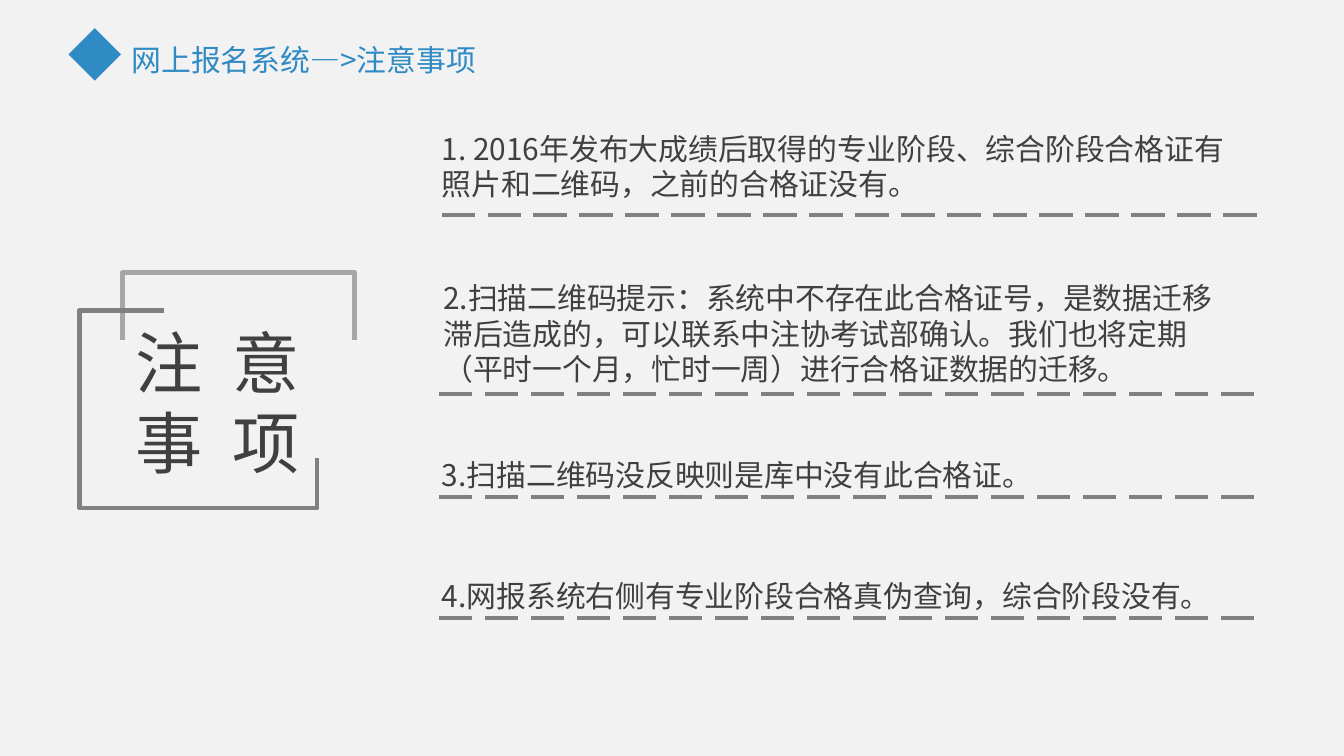
from pptx import Presentation
from pptx.dml.color import RGBColor
from pptx.enum.dml import MSO_LINE
from pptx.enum.shapes import MSO_CONNECTOR, MSO_SHAPE
from pptx.oxml.ns import qn
from pptx.util import Inches, Pt
from lxml import etree

STRAIGHT = MSO_CONNECTOR.STRAIGHT
DIAMOND = MSO_SHAPE.DIAMOND
LONG_DASH = MSO_LINE.LONG_DASH

BACKGROUND = RGBColor(0xF2, 0xF2, 0xF2)
BLUE = RGBColor(0x30, 0x8B, 0xC4)
INK = RGBColor(0x40, 0x40, 0x40)
GREY = RGBColor(0x80, 0x80, 0x80)
LIGHT_GREY = RGBColor(0xA6, 0xA6, 0xA6)
FONT = "Noto Sans CJK SC"

# Grid of square cells on a 16:9 slide
CELL = Inches(0.1)
COLUMNS = 100
ROWS = COLUMNS * 9 / 16


def cells(*counts):
    return [round(count * CELL) for count in counts]


def add_text(area, lines, size, color, tab=None):
    box = slide.shapes.add_textbox(*cells(*area))
    frame = box.text_frame
    frame.word_wrap = True
    for index, line in enumerate(lines):
        paragraph = frame.paragraphs[0] if index == 0 else frame.add_paragraph()
        paragraph.text = line
        paragraph.line_spacing = Pt(size * 1.2)
        properties = paragraph._p.get_or_add_pPr()
        if tab:
            stops = etree.SubElement(properties, qn("a:tabLst"))
            etree.SubElement(stops, qn("a:tab"), pos=str(cells(tab)[0]), algn="l")
        paragraph.font.size = Pt(size)
        paragraph.font.name = FONT
        paragraph.font.color.rgb = color
        # Chinese characters take the East Asian typeface
        defaults = properties.find(qn("a:defRPr"))
        etree.SubElement(defaults, qn("a:ea"), typeface=FONT)
    return frame


prs = Presentation()
prs.slide_width, prs.slide_height = cells(COLUMNS, ROWS)
slide = prs.slides.add_slide(prs.slide_layouts[6])
slide.background.fill.solid()
slide.background.fill.fore_color.rgb = BACKGROUND

# Header: breadcrumb and diamond
breadcrumb = add_text((9.1, 2.7, 29.1, 3.4), ["网上报名系统—>注意事项"], 16, BLUE)
breadcrumb.margin_left = breadcrumb.margin_right = Inches(0.07)
breadcrumb.margin_top = breadcrumb.margin_bottom = Inches(0.04)

diamond = slide.shapes.add_shape(DIAMOND, *cells(5.1, 2.1, 3.9, 3.9))
diamond.shadow.inherit = False
diamond.fill.solid()
diamond.fill.fore_color.rgb = BLUE
diamond.line.fill.background()

# Section title inside two open brackets
add_text((9.1, 23.4, 15.6, 13.1), ["注\t意", "事\t项"], 36, INK, tab=7.2)

brackets = [
    (LIGHT_GREY, [(9.1, 25.3), (9.1, 20.3), (26.4, 20.3), (26.4, 25.3)]),
    (GREY, [(23.6, 34.1), (23.6, 37.8), (5.9, 37.8), (5.9, 23.1), (12.2, 23.1)]),
]
for color, corners in brackets:
    start, *rest = [cells(*corner) for corner in corners]
    builder = slide.shapes.build_freeform(*start)
    builder.add_line_segments(rest, close=False)
    bracket = builder.convert_to_shape()
    bracket.shadow.inherit = False
    bracket.fill.background()
    bracket.line.color.rgb = color
    bracket.line.width = Pt(2.5)

# Notes: left, top, width, height, then the rule's left, right and row
notes = [
    ((31.9, 9.2, 61.4, 6.4), (32, 93.5, 16),
     "1. 2016年发布大成绩后取得的专业阶段、综合阶段合格证有照片和二维码，之前的合格证没有。"),
    ((32, 20.3, 61.4, 9.1), (31.9, 93.3, 29.3),
     "2.扫描二维码提示：系统中不存在此合格证号，是数据迁移滞后造成的，可以联系中注协考试部确认。"
     "我们也将定期（平时一个月，忙时一周）进行合格证数据的迁移。"),
    ((31.9, 33.5, 61.6, 3.7), (31.9, 93.3, 37),
     "3.扫描二维码没反映则是库中没有此合格证。"),
    ((31.9, 42.5, 61.6, 3.7), (31.9, 93.3, 46),
     "4.网报系统右侧有专业阶段合格真伪查询，综合阶段没有。"),
]
for area, (left, right, row), note in notes:
    rule = slide.shapes.add_connector(STRAIGHT, *cells(right, row, left, row))
    rule.line.color.rgb = GREY
    rule.line.width = Pt(2.25)
    rule.line.dash_style = LONG_DASH
    etree.SubElement(rule._element.spPr, qn("a:effectLst"))
    add_text(area, [note], 16, INK)

prs.save("out.pptx")
